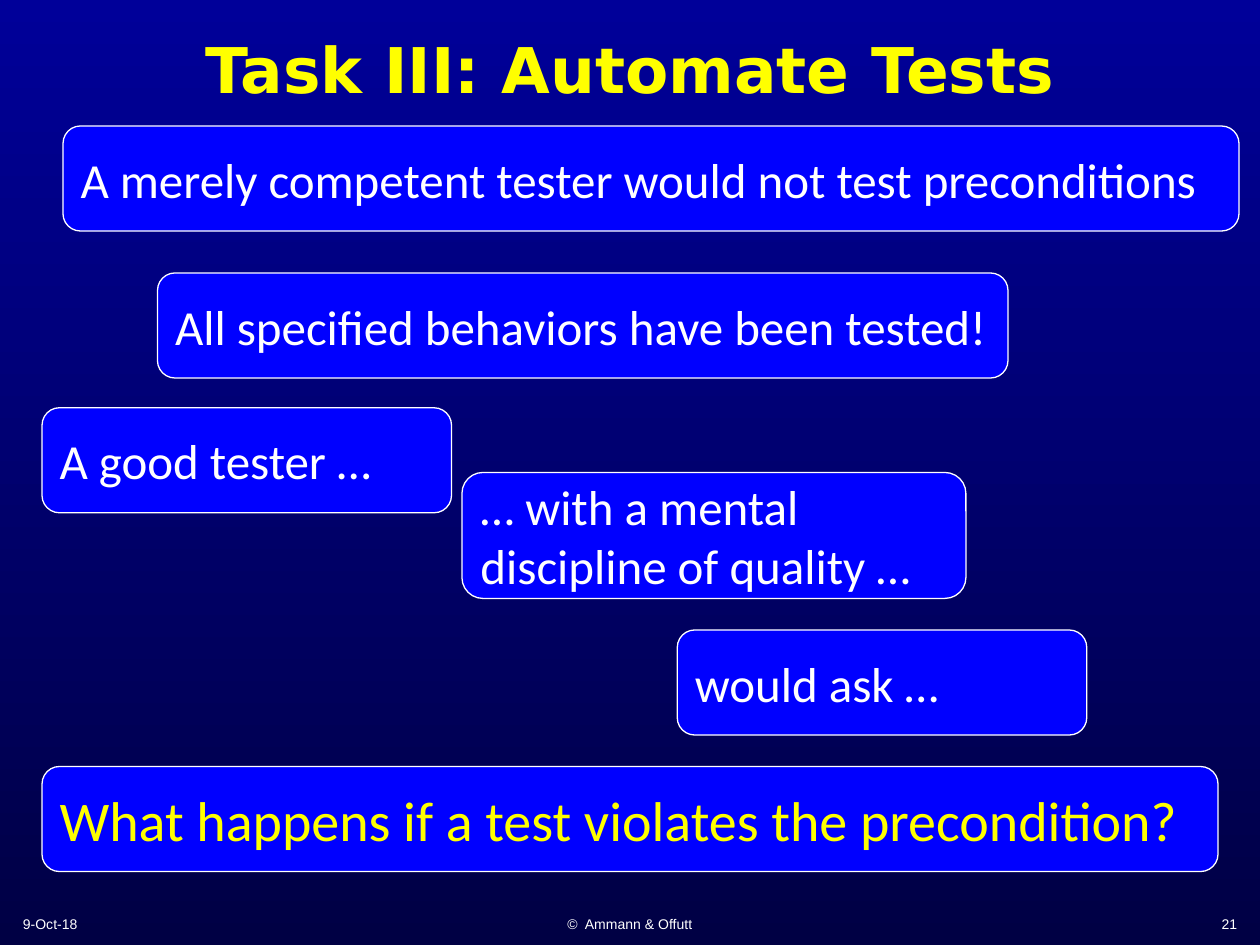
from pptx import Presentation
from pptx.dml.color import RGBColor
from pptx.enum.shapes import MSO_SHAPE
from pptx.enum.text import MSO_ANCHOR, PP_ALIGN
from pptx.util import Pt

COLORS = {
    "sky": "000099",
    "night": "000044",
    "bubble": "0000FF",
    "white": "FFFFFF",
    "yellow": "FFFF00",
}
BUBBLE_HEIGHT = 60


def color(name):
    return RGBColor.from_string(COLORS[name])


def paint_background(slide):
    fill = slide.background.fill
    fill.gradient()
    fill.gradient_angle = 270  # counter-clockwise, so top to bottom
    for stop, name in zip(fill.gradient_stops, ("sky", "night")):
        stop.color.rgb = color(name)


def write(shape, wording, font, size, ink="white", align=PP_ALIGN.LEFT, bold=False):
    frame = shape.text_frame
    frame.word_wrap = True
    frame.vertical_anchor = MSO_ANCHOR.MIDDLE
    paragraph = frame.paragraphs[0]
    paragraph.alignment = align
    run = paragraph.add_run()
    run.text = wording
    run.font.name = font
    run.font.size = Pt(size)
    run.font.bold = bold
    run.font.color.rgb = color(ink)


def add_label(slide, left, top, width, height, wording, font, size, **style):
    label = slide.shapes.add_textbox(Pt(left), Pt(top), Pt(width), Pt(height))
    write(label, wording, font, size, **style)


def add_bubble(slide, left, top, width, wording, height=BUBBLE_HEIGHT, size=28, ink="white"):
    bubble = slide.shapes.add_shape(
        MSO_SHAPE.ROUNDED_RECTANGLE, Pt(left), Pt(top), Pt(width), Pt(height))
    bubble.shadow.inherit = False
    bubble.fill.solid()
    bubble.fill.fore_color.rgb = color("bubble")
    bubble.line.color.rgb = color("white")
    bubble.line.width = Pt(0.75)
    write(bubble, wording, "Calibri", size, ink)


def main():
    deck = Presentation()
    deck.slide_width, deck.slide_height = Pt(720), Pt(540)
    slide = deck.slides.add_slide(deck.slide_layouts[6])
    paint_background(slide)

    # Title
    add_label(slide, 6, 6, 708, 66, "Task III: Automate Tests", "DejaVu Sans", 36,
              ink="yellow", align=PP_ALIGN.CENTER, bold=True)

    # Footer: date, authors, page number
    for left, width, wording, align in (
        (6, 150, "9-Oct-18", PP_ALIGN.LEFT),
        (246, 228, "©  Ammann & Offutt", PP_ALIGN.CENTER),
        (564, 150, "21", PP_ALIGN.RIGHT),
    ):
        add_label(slide, left, 516, width, 24, wording, "Arial", 8, align=align)

    # The competent tester
    add_bubble(slide, 36, 72, 672, "A merely competent tester would not test preconditions")
    add_bubble(slide, 90, 156, 486, "All specified behaviors have been tested!")

    # The good tester
    add_bubble(slide, 24, 233, 234, "A good tester …")
    add_bubble(slide, 264, 270, 288, "… with a mental discipline of quality …", height=72)
    add_bubble(slide, 387, 360, 234, "would ask …")

    # The question
    add_bubble(slide, 24, 438, 672, "What happens if a test violates the precondition?",
               size=32, ink="yellow")

    deck.save("out.pptx")


if __name__ == "__main__":
    main()
